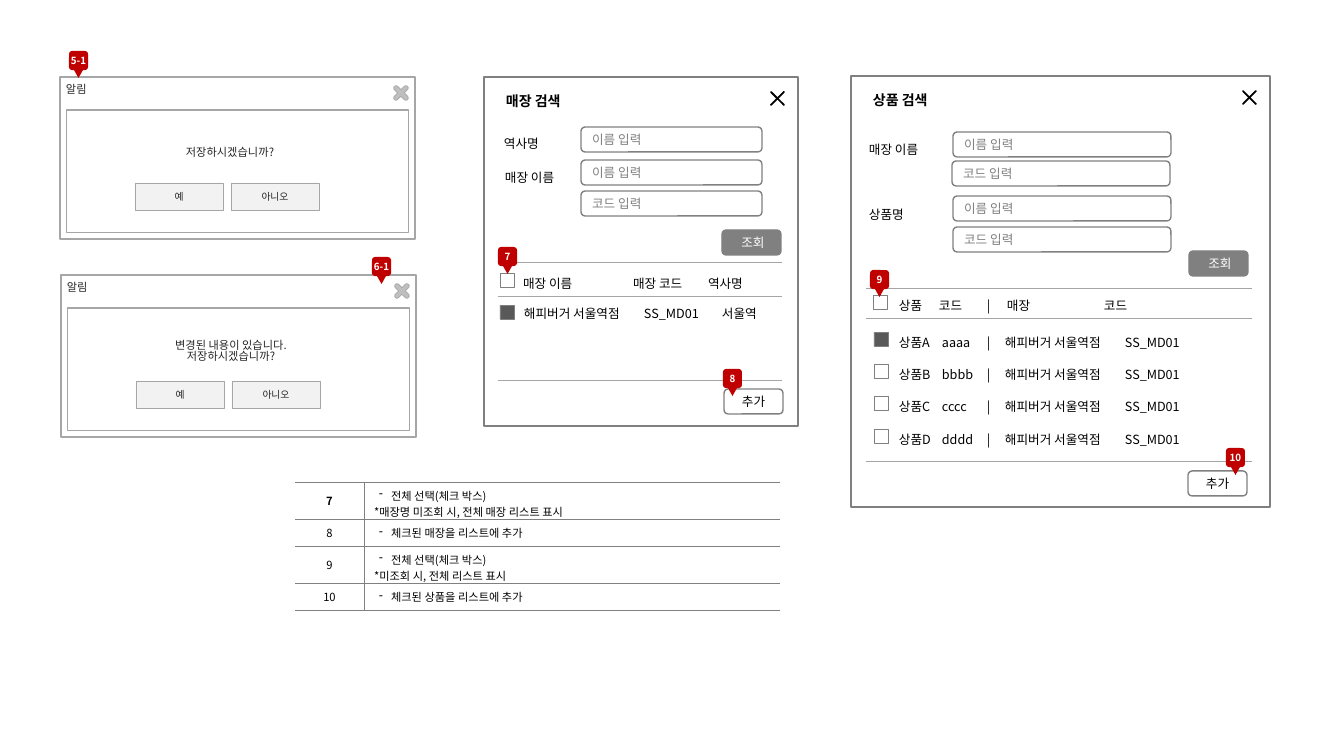
"""Builds the wireframe slide of the save alerts, the search pop-ups and their notes."""
from dataclasses import dataclass
from typing import Optional

from lxml import etree
from pptx import Presentation
from pptx import util as u
from pptx.dml.color import RGBColor
from pptx.enum import shapes, text
from pptx.oxml.ns import qn


@dataclass(frozen=True)
class Theme:
    font: str = "Noto Sans CJK KR"
    white: str = "FFFFFF"
    black: str = "000000"
    ink: str = "262626"
    checked: str = "595959"
    gray: str = "808080"
    rule: str = "A5A5A5"
    frame: str = "A6A6A6"
    cross: str = "BFBFBF"
    button: str = "F2F2F2"
    red: str = "C00000"
    title: int = 10
    body: int = 9
    note: int = 8
    small: int = 7


@dataclass(frozen=True)
class Style:
    size: int
    color: str
    bold: bool = False
    center: bool = False
    spacing: Optional[float] = None
    tabs: tuple[int, ...] = ()


@dataclass(frozen=True)
class Alert:
    x: int
    y: int
    message: str


@dataclass(frozen=True)
class Row:
    x: int
    y: int
    cells: tuple[str, ...]
    tabs: tuple[int, ...]
    box: tuple[int, int]
    spacing: float = 1.5
    checked: bool = False


@dataclass(frozen=True)
class Panel:
    frame: tuple[int, int, int, int]
    title: str
    labels: tuple[tuple[str, int, int], ...]
    fields: tuple[tuple[str, int, int], ...]
    field_width: int
    search: tuple[int, int]
    add: tuple[int, int]
    rules: tuple[int, ...]
    rule_span: tuple[int, int]
    rows: tuple[Row, ...]


T = Theme()
NAME, CODE = "이름 입력", "코드 입력"
STORE = "해피버거 서울역점"
KIND = shapes.MSO_SHAPE
PRODUCT_TABS = (43, 88, 106, 226)

ALERTS = (Alert(61, 275, "변경된 내용이 있습니다.\n저장하시겠습니까?"), Alert(60, 77, "저장하시겠습니까?"))
STORE_PANEL = Panel(
    (484, 77, 314, 349), "매장 검색",
    (("역사명", 494, 123), ("매장 이름", 495, 157)),
    ((NAME, 581, 127), (NAME, 581, 160), (CODE, 581, 191)), 181,
    (722, 230), (724, 389), (262, 296, 380), (498, 782),
    (Row(513, 263, ("매장 이름", "매장 코드", "역사명"), (110, 185), (500, 273)),
     Row(514, 301, (STORE, "SS_MD01", "서울역"), (120, 198), (500, 305), 1.0, True)))
PRODUCT_PANEL = Panel(
    (851, 76, 419, 431), "상품 검색",
    (("매장 이름", 859, 129), ("상품명", 859, 194)),
    ((NAME, 953, 132), (CODE, 952, 161), (NAME, 953, 196), (CODE, 953, 227)), 218,
    (1189, 251), (1188, 471), (288, 318, 461), (866, 1252),
    (Row(889, 285, ("상품", "코드", "|", "매장", "코드"), (40, 88, 108, 205), (873, 295)),
     *(Row(889, 322 + i * 97 // 3, (f"상품{letter}", letter.lower() * 4, "|", STORE, "SS_MD01"),
           PRODUCT_TABS, (874, 332 + i * 97 // 3), checked=i == 0)
       for i, letter in enumerate("ABCD"))))
BADGES = (("6-1", 372, 257), ("5-1", 69, 51), ("7", 498, 247), ("8", 723, 369),
          ("9", 870, 270), ("10", 1226, 448))
NOTES = (("7", ("- 전체 선택(체크 박스)", "*매장명 미조회 시, 전체 매장 리스트 표시")),
         ("8", ("- 체크된 매장을 리스트에 추가",)),
         ("9", ("- 전체 선택(체크 박스)", "*미조회 시, 전체 리스트 표시")),
         ("10", ("- 체크된 상품을 리스트에 추가",)))


def px(length: float) -> u.Emu:
    return u.Emu(round(length * 914400 / 100.8))


def rgb(color: str) -> RGBColor:
    return RGBColor.from_string(color)


def write(frame, words: str, style: Style) -> None:
    frame.text = words
    for paragraph in frame.paragraphs:
        paragraph.alignment = text.PP_ALIGN.CENTER if style.center else text.PP_ALIGN.LEFT
        if style.spacing:
            paragraph.line_spacing = style.spacing
        if style.tabs:
            stops = etree.SubElement(paragraph._p.get_or_add_pPr(), qn("a:tabLst"))
            for tab in style.tabs:
                etree.SubElement(stops, qn("a:tab"), pos=str(px(tab)), algn="l")
        for run in paragraph.runs:
            run.font.size, run.font.bold = u.Pt(style.size), style.bold
            run.font.color.rgb = rgb(style.color)
            run.font.name = T.font
            etree.SubElement(run._r.get_or_add_rPr(), qn("a:ea"), typeface=T.font)


def paint(shape, fill: str, line: Optional[str], width: float) -> None:
    shape.shadow.inherit = False
    shape.fill.solid()
    shape.fill.fore_color.rgb = rgb(fill)
    if line:
        shape.line.color.rgb = rgb(line)
        shape.line.width = u.Pt(width)
    else:
        shape.line.fill.background()


def block(slide, kind, box: tuple[int, int, int, int], fill: str, line: Optional[str] = None,
          width: float = 1, words: str = "", style: Optional[Style] = None):
    shape = slide.shapes.add_shape(kind, *map(px, box))
    paint(shape, fill, line, width)
    if style:
        shape.text_frame.vertical_anchor = text.MSO_ANCHOR.MIDDLE
        write(shape.text_frame, words, style)
    return shape


def label(slide, box: tuple[int, int, int, int], words: str, style: Style,
          inset: tuple[int, int] = (10, 5), middle: bool = False) -> None:
    frame = slide.shapes.add_textbox(*map(px, box)).text_frame
    frame.word_wrap = True
    frame.margin_left = frame.margin_right = px(inset[0])
    frame.margin_top = frame.margin_bottom = px(inset[1])
    frame.vertical_anchor = text.MSO_ANCHOR.MIDDLE if middle else text.MSO_ANCHOR.TOP
    write(frame, words, style)


def draw_cross(slide, x: int, y: int) -> None:
    arm = [(33, 0), (69, 36), (73, 52), (66, 66), (52, 73), (36, 69)]
    points = []
    for _ in range(4):
        points += arm
        arm = [(-b, a) for a, b in arm]
    builder = slide.shapes.build_freeform(*points[0], scale=px(1) / 10)
    builder.add_line_segments(points[1:], close=True)
    paint(builder.convert_to_shape(px(x), px(y)), T.cross, T.frame, 0.5)


def draw_alert(slide, alert: Alert) -> None:
    x, y = alert.x, alert.y
    block(slide, KIND.RECTANGLE, (x, y, 355, 162), T.white, T.frame)
    block(slide, KIND.RECTANGLE, (x + 7, y + 33, 342, 123), T.white, T.frame, 0.75)
    for answer, dx in (("아니오", 171), ("예", 75)):
        block(slide, KIND.RECTANGLE, (x + dx, y + 106, 88, 27), T.button, T.frame, 0.5,
              answer, Style(T.small, T.ink, center=True))
    draw_cross(slide, x + 341, y + 16)
    label(slide, (x + 11, y + 49, 318, 55), alert.message,
          Style(T.note, T.ink, center=True, spacing=0.8), (6, 3), True)
    label(slide, (x, y + 2, 47, 21), "알림", Style(T.note, T.ink), (6, 3))


def draw_panel(slide, panel: Panel) -> None:
    x, y, width, _ = panel.frame
    block(slide, KIND.RECTANGLE, panel.frame, T.white, T.gray)
    label(slide, (x + 12, y + 11, 209, 27), panel.title, Style(T.title, T.black, bold=True))
    close = block(slide, KIND.MATH_MULTIPLY, (x + width - 33, y + 9, 25, 25), T.black, T.black)
    close.adjustments[0] = 0.015
    for words, left, top in panel.labels:
        label(slide, (left, top, 97, 30), words, Style(T.body, T.black, spacing=1.5))
    for words, left, top in panel.fields:
        block(slide, KIND.ROUNDED_RECTANGLE, (left, top, panel.field_width, 25), T.white, T.gray,
              1, words, Style(T.body, T.gray))
    for words, spot, fill, ink in ((" 조회", panel.search, T.gray, T.white),
                                   ("추가", panel.add, T.white, T.black)):
        block(slide, KIND.ROUNDED_RECTANGLE, (*spot, 59, 25), fill, T.gray, 1, words,
              Style(T.body, ink, center=True))
    for top in panel.rules:
        left, right = map(px, panel.rule_span)
        rule = slide.shapes.add_connector(shapes.MSO_CONNECTOR.STRAIGHT, left, px(top), right, px(top))
        rule.line.color.rgb, rule.line.width = rgb(T.rule), u.Pt(0.5)
        etree.SubElement(rule._element.spPr, qn("a:effectLst"))
    for row in panel.rows:
        label(slide, (row.x, row.y, x + width - row.x - 2, 30), "\t".join(row.cells),
              Style(T.body, T.black, spacing=row.spacing, tabs=row.tabs))
        block(slide, KIND.RECTANGLE, (*row.box, 14, 14), T.checked if row.checked else T.white,
              T.gray, 0.5)


def draw_badge(slide, number: str, x: int, y: int) -> None:
    block(slide, KIND.ISOSCELES_TRIANGLE, (x + 5, y + 19, 9, 8), T.red).rotation = 180
    frame = block(slide, KIND.ROUNDED_RECTANGLE, (x, y, 19, 19), T.red, words=number,
                  style=Style(T.small, T.white, bold=True, center=True)).text_frame
    frame.margin_left = frame.margin_right = frame.margin_top = frame.margin_bottom = 0
    frame.word_wrap = False


def finish_cell(cell, sides: str) -> None:
    cell.vertical_anchor = text.MSO_ANCHOR.MIDDLE
    for side in "LRTB":
        line = etree.SubElement(cell._tc.get_or_add_tcPr(), qn(f"a:ln{side}"), w=str(u.Pt(0.75)))
        if side in sides:
            etree.SubElement(etree.SubElement(line, qn("a:solidFill")), qn("a:srgbClr"), val=T.gray)
        else:
            etree.SubElement(line, qn("a:noFill"))
    cell.fill.background()


def draw_notes(slide) -> None:
    table = slide.shapes.add_table(len(NOTES), 2, px(295), px(482), px(485), px(128)).table
    table.first_row = table.horz_banding = False
    table.columns[0].width, table.columns[1].width = px(69), px(416)
    for i, (number, lines) in enumerate(NOTES):
        table.rows[i].height = px(17 + 10 * len(lines))
        key, detail = table.cell(i, 0), table.cell(i, 1)
        write(key.text_frame, number, Style(T.note, T.black, bold=i == 0, center=True))
        write(detail.text_frame, "\n".join(lines).removeprefix("- "), Style(T.note, T.black))
        bulleted = detail.text_frame.paragraphs[0]._p.get_or_add_pPr()
        bulleted.set("marL", str(px(17)))
        bulleted.set("indent", str(px(-12)))
        etree.SubElement(bulleted, qn("a:buChar"), char="-")
        if len(lines) > 1:
            table.rows[i].height = px(37)
            detail.margin_bottom = 0
        finish_cell(key, "RTB")
        finish_cell(detail, "LTB")


def main() -> None:
    deck = Presentation()
    deck.slide_width, deck.slide_height = px(1344), px(756)
    slide = deck.slides.add_slide(deck.slide_layouts[6])
    for alert in ALERTS:
        draw_alert(slide, alert)
    for panel in (STORE_PANEL, PRODUCT_PANEL):
        draw_panel(slide, panel)
    for badge in BADGES:
        draw_badge(slide, *badge)
    draw_notes(slide)
    deck.save("out.pptx")


if __name__ == "__main__":
    main()
